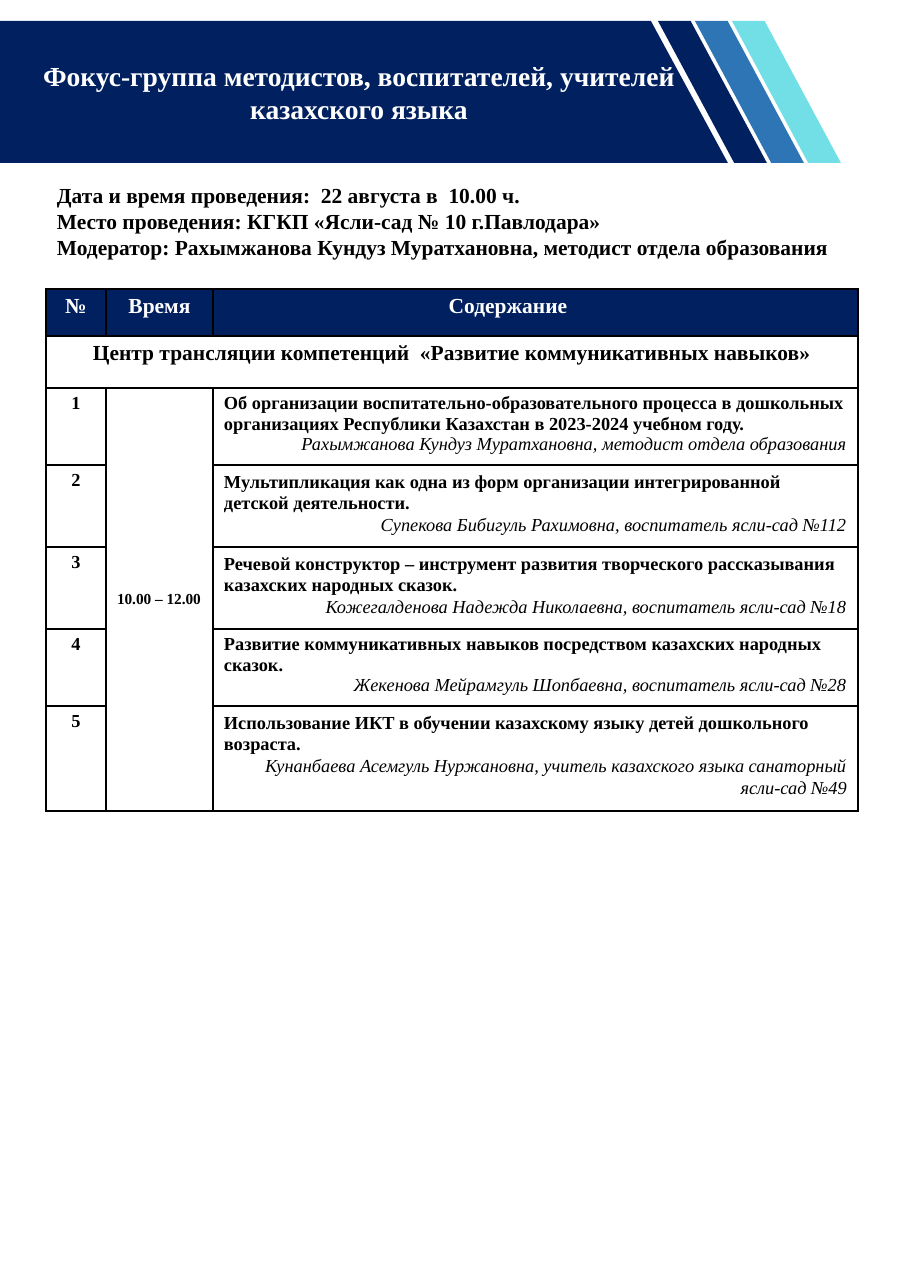
from dataclasses import dataclass

from lxml import etree
from pptx import Presentation
from pptx import util as u
from pptx.dml.color import RGBColor
from pptx.enum import shapes, text
from pptx.oxml.ns import qn

EMU_PER_PX = 8298
ALIGN = text.PP_ALIGN
ANCHOR = text.MSO_ANCHOR


@dataclass(frozen=True)
class Theme:
    font: str = "Times New Roman"
    navy: str = "002060"
    blue: str = "2E75B6"
    aqua: str = "71DFE5"
    white: str = "FFFFFF"
    black: str = "000000"
    title: int = 18
    heading: int = 14
    body: int = 12
    small: int = 10
    border: int = 1


THEME = Theme()
TITLE = "Фокус-группа методистов, воспитателей, учителей казахского языка"
DETAILS = [
    "Дата и время проведения:  22 августа в  10.00 ч.",
    "Место проведения: КГКП «Ясли-сад № 10 г.Павлодара»",
    "Модератор: Рахымжанова Кундуз Муратхановна, методист отдела образования",
]
SECTION = "Центр трансляции компетенций  «Развитие коммуникативных навыков»"
TIME = "10.00 – 12.00"
TALKS = [
    ("Об организации воспитательно-образовательного процесса в дошкольных "
     "организациях Республики Казахстан в 2023-2024 учебном году.",
     "Рахымжанова Кундуз Муратхановна, методист отдела образования", 1.0),
    ("Мультипликация как одна из форм организации интегрированной детской деятельности.",
     "Супекова Бибигуль Рахимовна, воспитатель ясли-сад №112", 1.07),
    ("Речевой конструктор – инструмент развития творческого рассказывания "
     "казахских народных сказок.",
     "Кожегалденова Надежда Николаевна, воспитатель ясли-сад №18", 1.07),
    ("Развитие коммуникативных навыков посредством казахских народных сказок.",
     "Жекенова Мейрамгуль Шопбаевна, воспитатель ясли-сад №28", 1.0),
    ("Использование ИКТ в обучении казахскому языку детей дошкольного возраста.",
     "Кунанбаева Асемгуль Нуржановна, учитель казахского языка санаторный ясли-сад №49",
     1.07),
]
COLUMN_WIDTHS = [60, 107, 645]
ROW_HEIGHTS = [47, 52, 77, 82, 82, 77, 105]


def px(length):
    return u.Emu(length * EMU_PER_PX)


def rgb(color):
    return RGBColor.from_string(color)


def style(paragraph, size, color=THEME.black, align=ALIGN.LEFT, italic=False, spacing=1.0):
    paragraph.alignment = align
    paragraph.line_spacing = spacing
    font = paragraph.font
    font.name = THEME.font
    font.size = u.Pt(size)
    font.bold = not italic
    font.italic = italic
    font.color.rgb = rgb(color)


def paint(shape, color):
    shape.shadow.inherit = False
    shape.fill.solid()
    shape.fill.fore_color.rgb = rgb(color)
    shape.line.fill.background()


def add_banner(slide, left, top, width, height):
    slant, stripe_width, stripe_step = 77, 109, 37
    builder = slide.shapes.build_freeform(left, top, scale=EMU_PER_PX)
    builder.add_line_segments([
        (left + width - slant, top),
        (left + width, top + height),
        (left, top + height),
    ], close=True)
    paint(builder.convert_to_shape(), THEME.navy)

    first_stripe = left + width - slant + 7
    for index, color in enumerate([THEME.navy, THEME.blue, THEME.aqua]):
        stripe = slide.shapes.add_shape(
            shapes.MSO_SHAPE.PARALLELOGRAM, px(first_stripe + index * stripe_step),
            px(top), px(stripe_width), px(height))
        stripe.adjustments[0] = 0.7
        stripe.element.spPr.xfrm.set("flipV", "1")
        paint(stripe, color)

    title = slide.shapes.title
    title.left, title.top = px(left + 21), px(top + 32)
    title.width, title.height = px(676), px(78)
    title.text_frame.text = TITLE
    title.text_frame.word_wrap = True
    title.text_frame.auto_size = text.MSO_AUTO_SIZE.NONE
    title.text_frame.vertical_anchor = ANCHOR.TOP
    style(title.text_frame.paragraphs[0], THEME.title, THEME.white, ALIGN.CENTER)
    title.element.getparent().append(title.element)


def add_details(slide, left, top, width, height):
    box = slide.shapes.add_textbox(px(left), px(top), px(width), px(height))
    frame = box.text_frame
    frame.word_wrap = True
    frame.text = "\n".join(DETAILS)
    for paragraph in frame.paragraphs:
        style(paragraph, THEME.heading)


def set_borders(cell):
    properties = cell._tc.get_or_add_tcPr()
    for index, side in enumerate(["a:lnL", "a:lnR", "a:lnT", "a:lnB"]):
        line = etree.Element(qn(side), w=str(u.Pt(THEME.border)))
        fill = etree.SubElement(line, qn("a:solidFill"))
        etree.SubElement(fill, qn("a:srgbClr"), val=THEME.black)
        properties.insert(index, line)


def write(cell, content, size, **format_options):
    cell.text = content
    style(cell.text_frame.paragraphs[0], size, **format_options)


def add_program(slide, left, top):
    table = slide.shapes.add_table(
        len(ROW_HEIGHTS), len(COLUMN_WIDTHS), px(left), px(top),
        px(sum(COLUMN_WIDTHS)), px(sum(ROW_HEIGHTS))).table
    table.first_row = table.horz_banding = False
    for column, width in zip(table.columns, COLUMN_WIDTHS):
        column.width = px(width)
    for row, height in zip(table.rows, ROW_HEIGHTS):
        row.height = px(height)
    for cell in table.iter_cells():
        cell.fill.background()
        set_borders(cell)

    for column, heading in enumerate(["№", "Время", "Содержание"]):
        cell = table.cell(0, column)
        cell.fill.solid()
        cell.fill.fore_color.rgb = rgb(THEME.navy)
        write(cell, heading, THEME.heading, color=THEME.white, align=ALIGN.CENTER)
    table.cell(0, 2).margin_right = px(66)

    section = table.cell(1, 0)
    section.merge(table.cell(1, 2))
    write(section, SECTION, THEME.heading, align=ALIGN.CENTER)

    time = table.cell(2, 1)
    time.merge(table.cell(len(ROW_HEIGHTS) - 1, 1))
    time.vertical_anchor = ANCHOR.MIDDLE
    write(time, TIME, THEME.small)

    for number, (topic, speaker, spacing) in enumerate(TALKS, start=1):
        row = number + 1
        write(table.cell(row, 0), str(number), THEME.body, align=ALIGN.CENTER)
        content = table.cell(row, 2)
        write(content, topic, THEME.body, spacing=spacing)
        paragraph = content.text_frame.add_paragraph()
        paragraph.text = speaker
        style(paragraph, THEME.body, align=ALIGN.RIGHT, italic=True, spacing=spacing)


def main():
    presentation = Presentation()
    presentation.slide_width, presentation.slide_height = px(911), px(1288)
    slide = presentation.slides.add_slide(presentation.slide_layouts[5])
    add_banner(slide, 0, 21, 728, 142)
    add_program(slide, 46, 289)
    add_details(slide, 46, 177, 814, 115)
    presentation.save("out.pptx")


if __name__ == "__main__":
    main()
